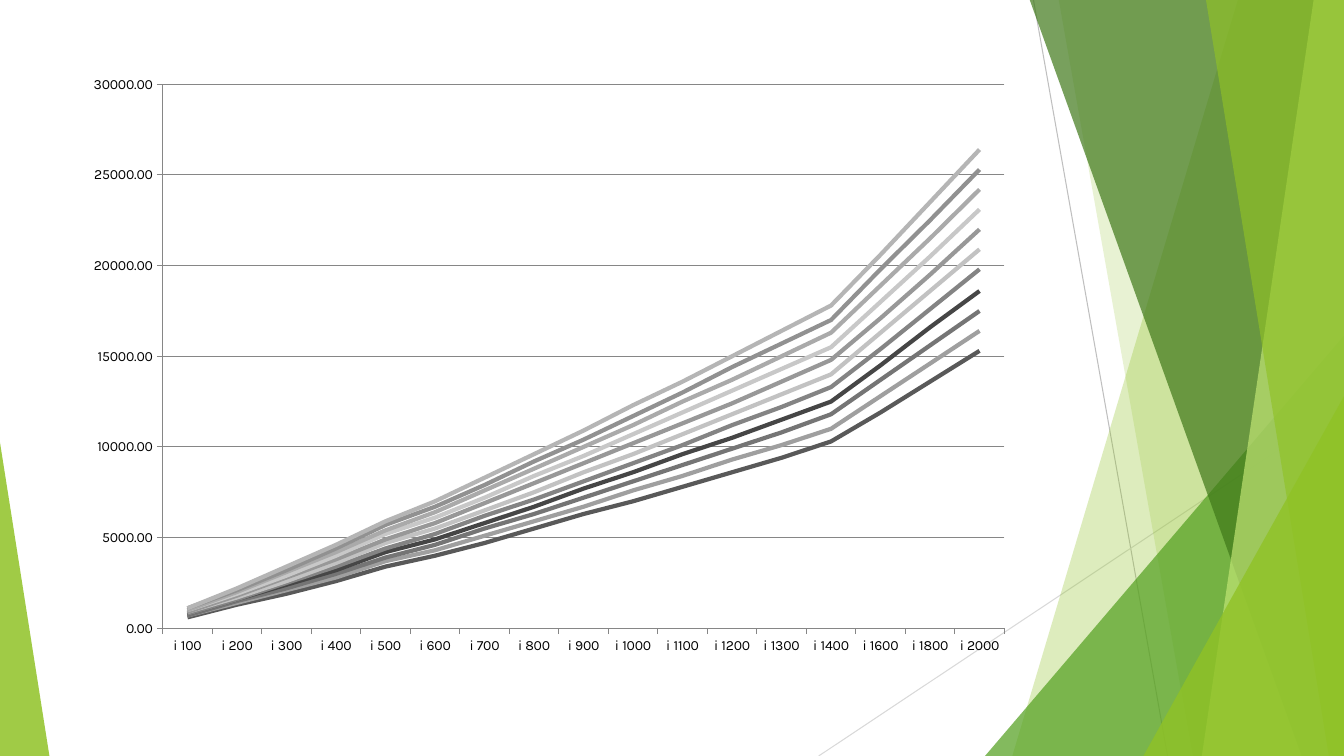
"""Build a slide with a growth line chart beside green translucent facets."""
from dataclasses import dataclass

from lxml.etree import SubElement
from pptx import Presentation
from pptx.chart.data import CategoryChartData
from pptx.dml.color import RGBColor
from pptx.enum.chart import XL_CHART_TYPE, XL_TICK_MARK
from pptx.enum.shapes import MSO_CONNECTOR, MSO_SHAPE
from pptx.oxml import parse_xml
from pptx.oxml.ns import nsdecls, qn
from pptx.util import Inches, Pt


@dataclass(frozen=True)
class Theme:
    font: str = "Karla"
    label_size: int = 10
    thin: float = 0.75
    thick: float = 3
    text: str = "000000"
    axis: str = "868686"
    lime: str = "90C226"
    green: str = "54A021"
    forest: str = "3F7819"
    pale: str = "C0E474"
    steep_ray: str = "BFBFBF"
    flat_ray: str = "D9D9D9"
    series: tuple = ("595959", "9F9F9F", "757575", "464646", "848484", "C2C2C2",
                     "989898", "C8C8C8", "AAAAAA", "919191", "B5B5B5")


theme = Theme()
WIDTH, HEIGHT, TOP = 13.33, 7.5, -0.01


def paint(shape, color, opacity):
    shape.shadow.inherit = False
    shape.fill.solid()
    shape.fill.fore_color.rgb = RGBColor.from_string(color)
    shape.line.fill.background()
    color_node = shape.fill._xPr.find(qn("a:solidFill"))[0]
    SubElement(color_node, qn("a:alpha"), val=str(opacity * 1000))


def stroke(line, color, width):
    line.color.rgb = RGBColor.from_string(color)
    line.width = Pt(width)


deck = Presentation()
deck.slide_width, deck.slide_height = Inches(WIDTH), Inches(HEIGHT)
page = deck.slides.add_slide(deck.slide_layouts[6])

rays = [
    (10.25, 0, 11.58, HEIGHT, theme.steep_ray),
    (WIDTH, 4.03, 8.12, HEIGHT, theme.flat_ray),
]
for *ends, color in rays:
    ray = page.shapes.add_connector(MSO_CONNECTOR.STRAIGHT, *map(Inches, ends))
    stroke(ray.line, color, theme.thin)
    SubElement(ray._element.spPr, qn("a:effectLst"))

facets = [
    ("band", 12.28, 10.04, theme.lime, 30),
    ("band", 10.5, 11.83, theme.lime, 20),
    ("triangle", 9.77, 3.33, 3.56, 1, theme.green, 72),
    ("band", 10.21, 12.91, theme.forest, 70),
    ("band", 13.03, 11.92, theme.pale, 70),
    ("band", 11.96, 13.18, theme.lime, 65),
    ("triangle", 11.34, 3.93, 1.99, 1, theme.lime, 80),
    ("triangle", 0, 4.39, 0.49, 0, theme.lime, 85),
]
for kind, *geometry, color, opacity in facets:
    if kind == "band":
        top_x, bottom_x = geometry
        outline = page.shapes.build_freeform(Inches(top_x), Inches(TOP))
        corners = [(WIDTH, TOP), (WIDTH, HEIGHT), (bottom_x, HEIGHT)]
        outline.add_line_segments([(Inches(x), Inches(y)) for x, y in corners], close=True)
        facet = outline.convert_to_shape()
    else:
        left, top, width, apex = geometry
        facet = page.shapes.add_shape(
            MSO_SHAPE.ISOSCELES_TRIANGLE, Inches(left), Inches(top),
            Inches(width), Inches(HEIGHT - top))
        facet.adjustments[0] = apex
    paint(facet, color, opacity)

steps = [*range(100, 1401, 100), *range(1600, 2001, 200)]
lowest_line = [640, 1280, 1930, 2600, 3420, 4000, 4745, 5490, 6270,
               7040, 7820, 8620, 9400, 10260, 11940, 13640, 15330]
highest_line = [1120, 2200, 3360, 4600, 5900, 7000, 8285, 9590, 10910,
                12260, 13620, 15000, 16400, 17800, 20620, 23480, 26390]
last_rank = len(theme.series) - 1

chart_data = CategoryChartData()
chart_data.categories = [f"i {step}" for step in steps]
for rank in range(last_rank + 1):
    evenly_spaced = [low + (high - low) * rank / last_rank
                     for low, high in zip(lowest_line, highest_line)]
    chart_data.add_series(f"Series {rank + 1}", [round(value, -2) for value in evenly_spaced])

chart = page.shapes.add_chart(
    XL_CHART_TYPE.LINE, Inches(0.74), Inches(0.64), Inches(9.4), Inches(5.97), chart_data).chart
chart.has_legend = chart.has_title = False
chart.font.name = theme.font
chart.font.size = Pt(theme.label_size)
chart.font.color.rgb = RGBColor.from_string(theme.text)

plot = chart.plots[0]
plot.vary_by_categories = False
for series, color in zip(plot.series, theme.series):
    series.smooth = False
    stroke(series.format.line, color, theme.thick)

shared_format = {"major_tick_mark": XL_TICK_MARK.OUTSIDE, "minor_tick_mark": XL_TICK_MARK.NONE}
category_format = {"has_major_gridlines": False}
value_format = {"minimum_scale": 0, "maximum_scale": 30000, "major_unit": 5000,
                "has_major_gridlines": True}
for axis, own_format in ((chart.category_axis, category_format),
                         (chart.value_axis, value_format)):
    for name, value in {**shared_format, **own_format}.items():
        setattr(axis, name, value)
    stroke(axis.format.line, theme.axis, theme.thin)
stroke(chart.value_axis.major_gridlines.format.line, theme.axis, theme.thin)
labels = chart.value_axis.tick_labels
labels.number_format, labels.number_format_is_linked = "0.00", False

plot_area = chart._chartSpace.chart.plotArea
for old_layout in plot_area.findall(qn("c:layout")):
    plot_area.remove(old_layout)
placement = {"layoutTarget": "inner", "xMode": "edge", "yMode": "edge",
             "x": 0.093, "y": 0.033, "w": 0.888, "h": 0.904}
layout = parse_xml(f"<c:layout {nsdecls('c')}><c:manualLayout/></c:layout>")
for name, value in placement.items():
    SubElement(layout[0], qn(f"c:{name}"), val=str(value))
plot_area.insert(0, layout)

deck.save("out.pptx")
